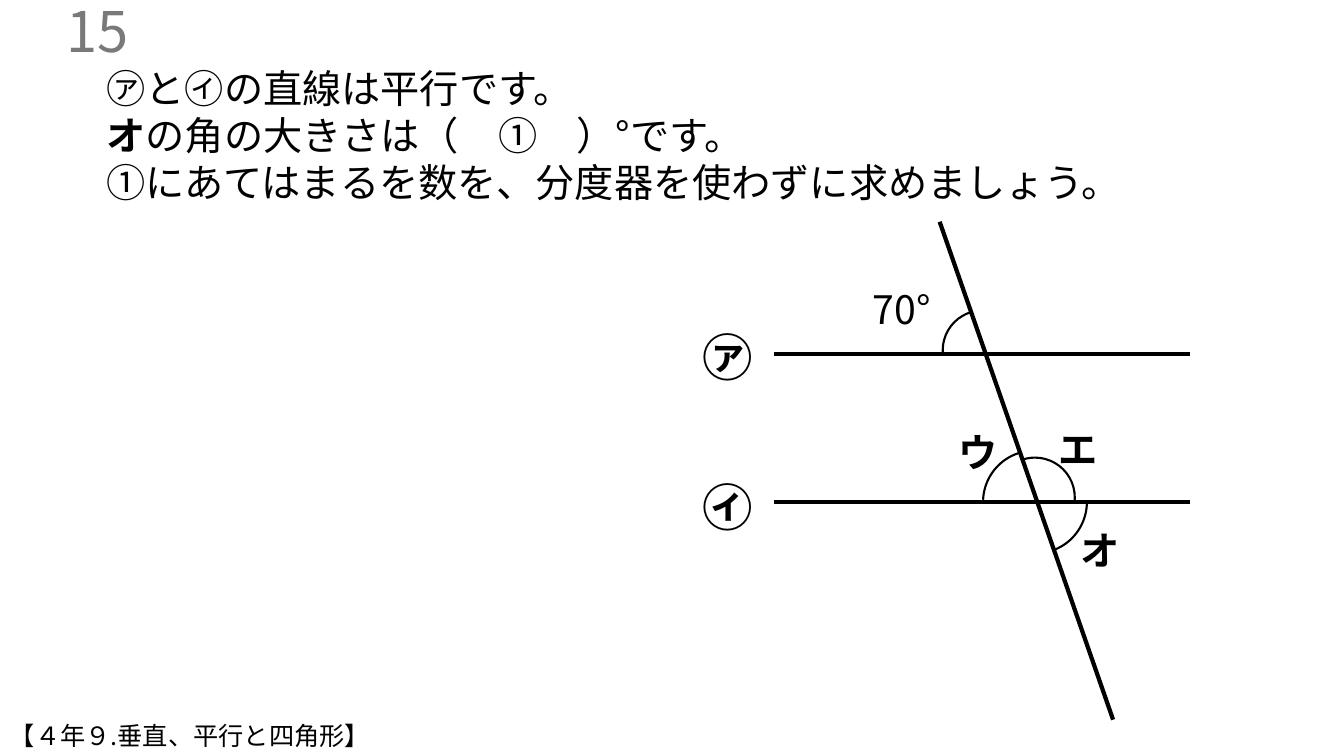
from lxml.etree import SubElement
from pptx import Presentation
from pptx.dml.color import RGBColor
from pptx.enum.shapes import MSO_CONNECTOR, MSO_SHAPE
from pptx.enum.text import MSO_ANCHOR, MSO_AUTO_SIZE, PP_ALIGN
from pptx.oxml.ns import qn
from pptx.util import Inches, Pt

COLORS = {"ink": "000000", "number": "797979"}
FONT = "Noto Sans CJK JP"


def add_text(slide, box, lines, size, color="ink", bold=False, frame_format=None,
             align=PP_ALIGN.LEFT):
    """Add a text box; each line is a list of (text, bold) runs or a plain string."""
    shape = slide.shapes.add_textbox(*(Inches(value) for value in box))
    frame = shape.text_frame
    settings = {"word_wrap": True, "auto_size": MSO_AUTO_SIZE.SHAPE_TO_FIT_TEXT}
    settings.update(frame_format or {})
    for name, value in settings.items():
        setattr(frame, name, value)
    for index, line in enumerate(lines):
        paragraph = frame.add_paragraph() if index else frame.paragraphs[0]
        paragraph.alignment = align
        runs = [(line, bold)] if isinstance(line, str) else line
        for text, run_bold in runs:
            run = paragraph.add_run()
            run.text = text
            font_format = {"size": Pt(size), "bold": run_bold, "name": FONT}
            for name, value in font_format.items():
                setattr(run.font, name, value)
            run.font.color.rgb = RGBColor.from_string(COLORS[color])
            SubElement(run.font._element, qn("a:ea"), typeface=FONT)


def add_line(slide, start, end):
    points = [Inches(value) for value in (*start, *end)]
    line = slide.shapes.add_connector(MSO_CONNECTOR.STRAIGHT, *points)
    line.line.width = Pt(3)
    line.line.color.rgb = RGBColor.from_string(COLORS["ink"])
    SubElement(line._element.spPr, qn("a:effectLst"))


def add_angle_arc(slide, left, top, diameter, start, end):
    """Draw an arc clockwise between two angles in degrees."""
    arc = slide.shapes.add_shape(MSO_SHAPE.ARC, Inches(left), Inches(top),
                                 Inches(diameter), Inches(diameter))
    arc.shadow.inherit = False
    arc.fill.background()
    arc.line.width = Pt(1.5)
    arc.line.color.rgb = RGBColor.from_string(COLORS["ink"])
    # Adjustments count 60000ths of a degree, scaled down by 100000.
    for index, angle in enumerate((start, end)):
        arc.adjustments[index] = angle * 0.6


def add_question(slide, left, top, width, height):
    add_text(slide, (left, top, width, height), [
        "㋐と㋑の直線は平行です。",
        [("オ", True), ("の角の大きさは（　①　）°です。", False)],
        "①にあてはまるを数を、分度器を使わずに求めましょう。",
    ], 28)


def add_question_number(slide, left, top, width, height):
    add_text(slide, (left, top, width, height), ["15"], 40, "number",
             frame_format={"vertical_anchor": MSO_ANCHOR.MIDDLE,
                           "auto_size": MSO_AUTO_SIZE.NONE},
             align=PP_ALIGN.RIGHT)


def add_angle_figure(slide, left, top, width, height):
    """Draw two parallel lines, the line crossing them and the marked angles."""
    arcs = [
        (2.48, 0.88, 0.79, 175.43, 251.13),
        (3.00, 2.34, 0.79, 250.62, 5.94),
        (2.89, 2.27, 1.02, 358.04, 68.27),
        (2.88, 2.27, 1.02, 182.49, 255.55),
    ]
    for x, y, diameter, start, end in arcs:
        add_angle_arc(slide, left + x, top + y, diameter, start, end)

    parallels = [("㋐", 1.31, 0.99), ("㋑", 2.78, 2.47)]
    for name, line_y, label_y in parallels:
        add_line(slide, (left + 0.81, top + line_y), (left + width, top + line_y))
        add_text(slide, (left, top + label_y, 0.79, 0.71), [name], 36, bold=True)
    add_line(slide, (left + 2.45, top), (left + 4.17, top + height))

    angle_labels = [
        ("70°", 1.69, 0.58, 0.99, False),
        ("ウ", 2.54, 2.00, 0.59, True),
        ("エ", 3.53, 1.97, 0.59, True),
        ("オ", 3.75, 2.97, 0.59, True),
    ]
    for text, x, y, label_width, bold in angle_labels:
        add_text(slide, (left + x, top + y, label_width, 0.57), [text], 28, bold=bold,
                 frame_format={"word_wrap": False})


def add_unit_name(slide, left, top, width, height):
    add_text(slide, (left, top, width, height), ["【４年９.垂直、平行と四角形】"], 18)


def main():
    presentation = Presentation()
    presentation.slide_width = Inches(13.33)
    presentation.slide_height = Inches(7.5)
    slide = presentation.slides.add_slide(presentation.slide_layouts[6])
    add_question(slide, 0.96, 0.59, 11.35, 1.51)
    add_question_number(slide, 0, 0.1, 1.37, 0.4)
    add_angle_figure(slide, 6.87, 2.2, 4.93, 4.94)
    add_unit_name(slide, 0, 7.1, 7.49, 0.4)
    presentation.save("out.pptx")


if __name__ == "__main__":
    main()
